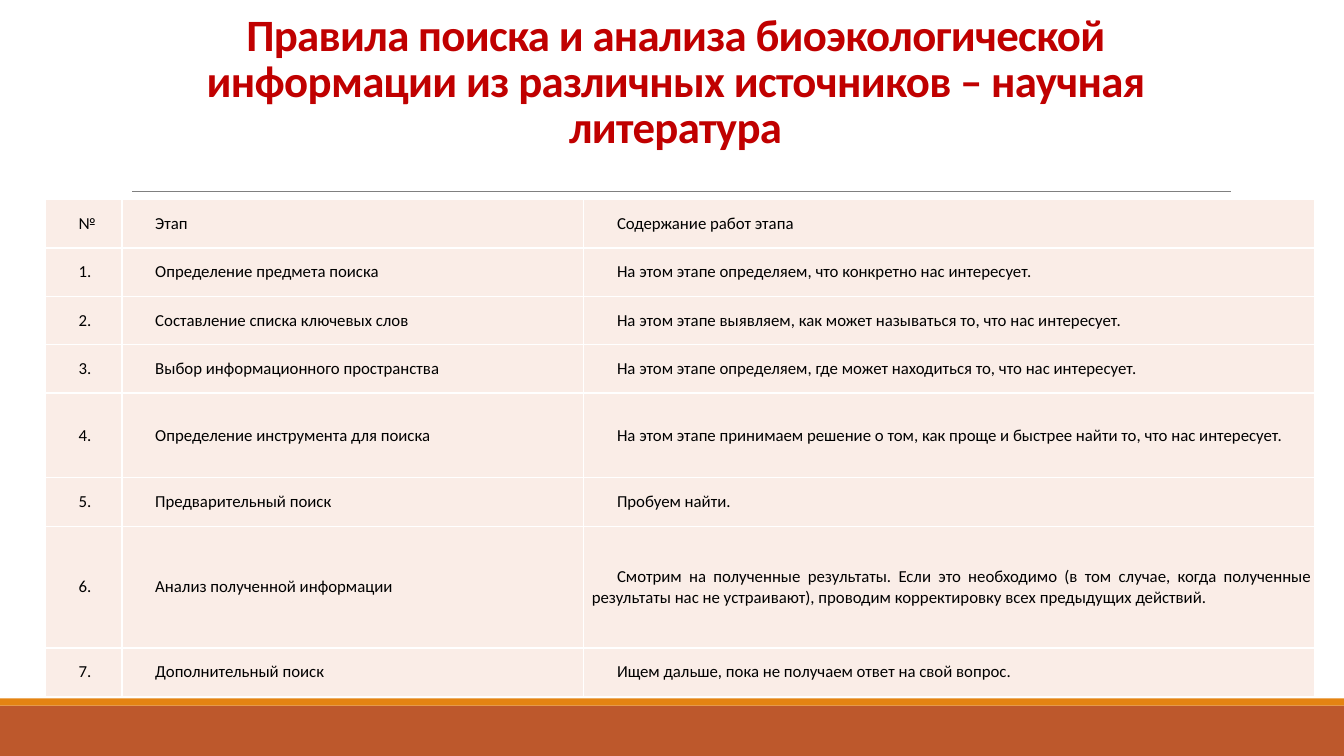
from lxml import etree
from pptx import Presentation
from pptx import util as u
from pptx.dml.color import RGBColor
from pptx.enum import shapes, text
from pptx.oxml.ns import qn

PX = 9144  # EMU per px, 100 px to the inch
COLORS = {
    "title": "C00000",
    "rule": "808080",
    "stripe": "E48312",
    "footer": "BD582C",
    "cell": "FAEDE7",
    "border": "FFFFFF",
    "body": "000000",
}


def color(name):
    return RGBColor.from_string(COLORS[name])


def set_format(target, values):
    for key, value in values.items():
        setattr(target, key, value)


deck = Presentation()
deck.slide_width, deck.slide_height = 1333 * PX, 750 * PX
slide = deck.slides.add_slide(deck.slide_layouts[6])

# Footer bands
for name, top, height in (("footer", 700, 50), ("stripe", 693, 7)):
    band = slide.shapes.add_shape(
        shapes.MSO_SHAPE.RECTANGLE, 0, top * PX, 1333 * PX, height * PX)
    band.shadow.inherit = False
    band.fill.solid()
    band.fill.fore_color.rgb = color(name)
    band.line.fill.background()

# Rule under the title
rule = slide.shapes.add_connector(
    shapes.MSO_CONNECTOR.STRAIGHT, 131 * PX, 190 * PX, 1221 * PX, 190 * PX)
rule.line.color.rgb = color("rule")
rule.line.width = u.Pt(0.5)
etree.SubElement(rule._element.spPr, qn("a:effectLst"))

# Title
title = slide.shapes.add_textbox(120 * PX, 31 * PX, 1100 * PX, 125 * PX).text_frame
set_format(title, {"word_wrap": True, "vertical_anchor": text.MSO_ANCHOR.BOTTOM})
heading = title.paragraphs[0]
set_format(heading, {"alignment": text.PP_ALIGN.CENTER, "line_spacing": 0.85})
words = heading.add_run()
words.text = ("Правила поиска и анализа биоэкологической информации "
              "из различных источников – научная литература")
set_format(words.font, {"name": "Calibri", "size": u.Pt(32), "bold": True})
words.font.color.rgb = color("title")
words.font._element.set("spc", "-50")

# Table of search stages
stages = [
    ("№", "Этап", "Содержание работ этапа"),
    ("1.", "Определение предмета поиска",
     "На этом этапе определяем, что конкретно нас интересует."),
    ("2.", "Составление списка ключевых слов",
     "На этом этапе выявляем, как может называться то, что нас интересует."),
    ("3.", "Выбор информационного пространства",
     "На этом этапе определяем, где может находиться то, что нас интересует."),
    ("4.", "Определение инструмента для поиска",
     "На этом этапе принимаем решение о том, как проще и быстрее найти то, "
     "что нас интересует."),
    ("5.", "Предварительный поиск", "Пробуем найти."),
    ("6.", "Анализ полученной информации",
     "Смотрим на полученные результаты. Если это необходимо (в том случае, "
     "когда полученные результаты нас не устраивают), проводим корректировку "
     "всех предыдущих действий."),
    ("7.", "Дополнительный поиск",
     "Ищем дальше, пока не получаем ответ на свой вопрос."),
]
column_widths = [76, 458, 725]
row_heights = [48, 48, 48, 48, 84, 48, 121, 48]
cell_format = {"vertical_anchor": text.MSO_ANCHOR.MIDDLE}
for side in ("left", "right", "top", "bottom"):
    cell_format[f"margin_{side}"] = 3 * PX

table = slide.shapes.add_table(
    len(stages), len(column_widths), 45 * PX, 198 * PX,
    sum(column_widths) * PX, sum(row_heights) * PX).table
for column, width in zip(table.columns, column_widths):
    column.width = width * PX
for row, height, entries in zip(table.rows, row_heights, stages):
    row.height = height * PX
    for cell, entry in zip(row.cells, entries):
        set_format(cell, cell_format)

        # Cell borders come before the fill
        props = cell._tc.get_or_add_tcPr()
        for edge in ("a:lnL", "a:lnR", "a:lnT", "a:lnB"):
            border = etree.SubElement(props, qn(edge), w=str(u.Pt(1)))
            paint = etree.SubElement(border, qn("a:solidFill"))
            etree.SubElement(paint, qn("a:srgbClr"), val=COLORS["border"])
        cell.fill.solid()
        cell.fill.fore_color.rgb = color("cell")

        # Justified text with a first-line indent
        line = cell.text_frame.paragraphs[0]
        line.alignment = text.PP_ALIGN.JUSTIFY
        indents = line._p.get_or_add_pPr()
        indents.set("marL", str(5 * PX))
        indents.set("indent", str(25 * PX))
        words = line.add_run()
        words.text = entry
        set_format(words.font, {"name": "Calibri", "size": u.Pt(12), "bold": False})
        words.font.color.rgb = color("body")

deck.save("out.pptx")
